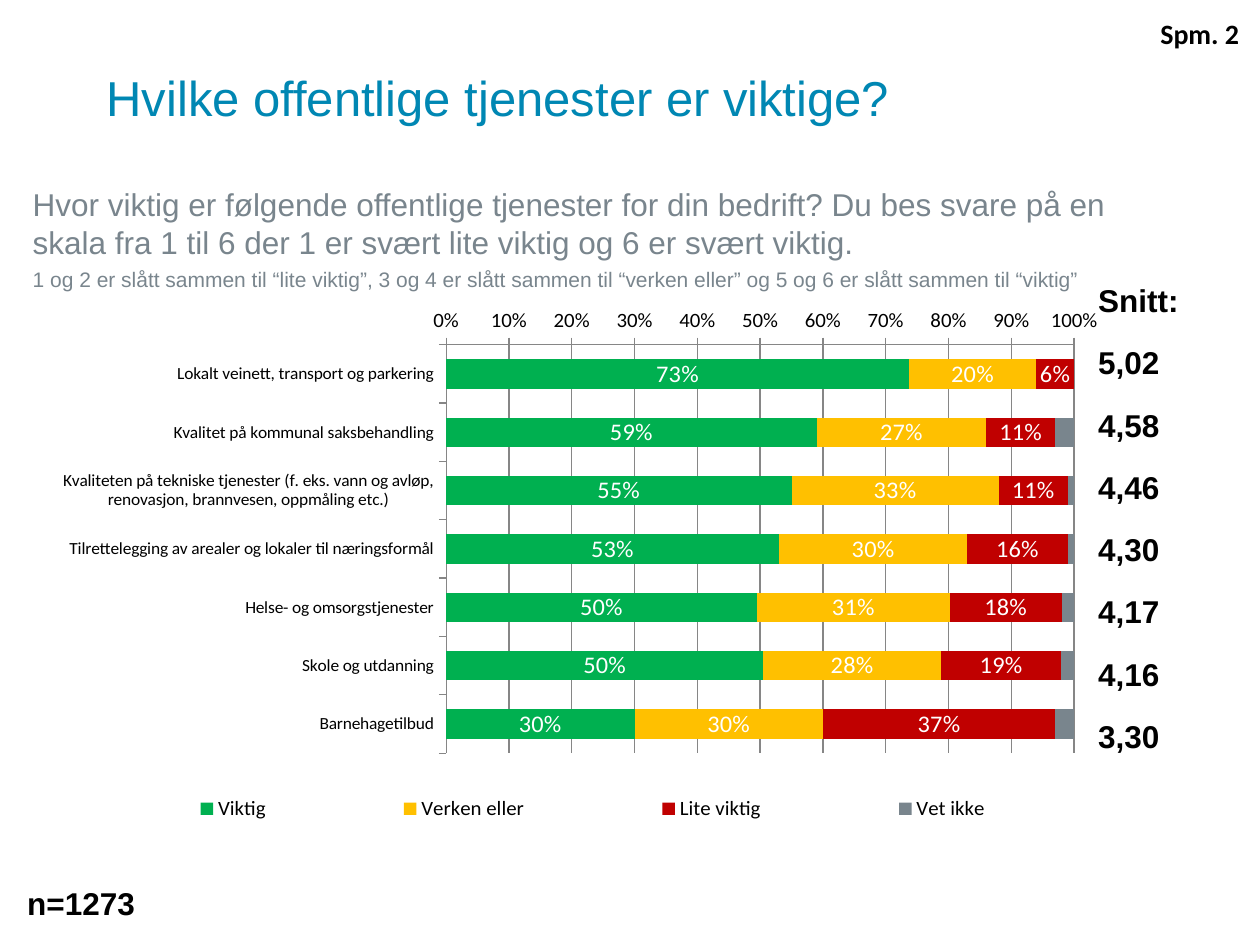
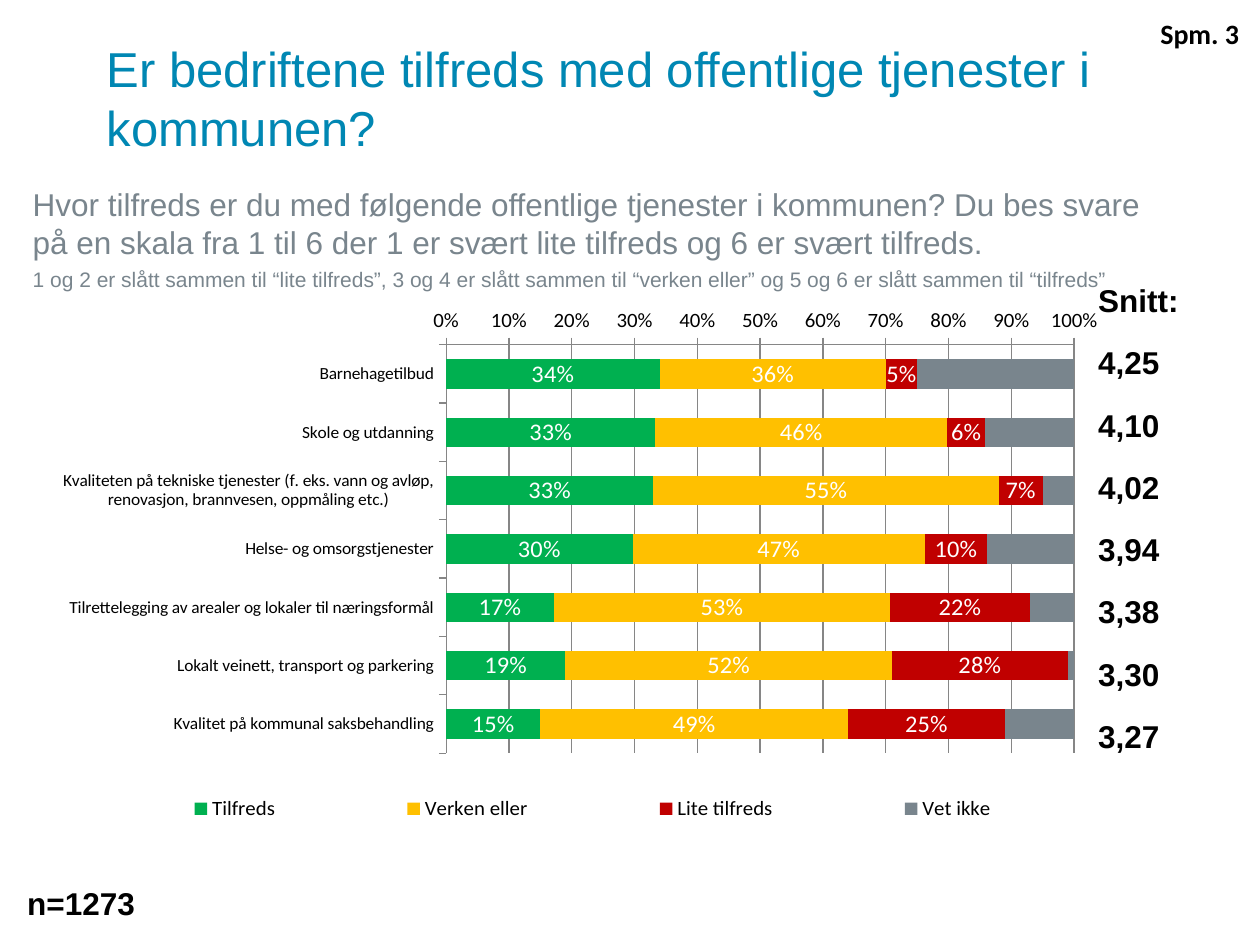
"""Build two survey slides: importance of, and satisfaction with, public services."""
from lxml import etree
from pptx import Presentation, util as u
from pptx.chart import data as chart_data
from pptx.dml.color import RGBColor
from pptx.enum import chart as ch, text
from pptx.oxml import ns

COLOURS = {"title": "0087B3", "grey": "79858D", "black": "000000", "white": "FFFFFF",
           "good": "00B050", "middle": "FFC000", "bad": "C00000", "grid": "868686"}
SERIES_COLOURS = ["good", "middle", "bad", "grey"]
PERCENT = "###0%"

ROADS = "Lokalt veinett, transport og parkering"
CASEWORK = "Kvalitet på kommunal saksbehandling"
TECHNICAL = ("Kvaliteten på tekniske tjenester (f. eks. vann og avløp, "
             "renovasjon, brannvesen, oppmåling etc.)")
PREMISES = "Tilrettelegging av arealer og lokaler til næringsformål"
HEALTH = "Helse- og omsorgstjenester"
SCHOOL = "Skole og utdanning"
NURSERY = "Barnehagetilbud"

SURVEYS = [
    {"number": 2, "title": "Hvilke offentlige tjenester er viktige?", "word": "viktig",
     "question": "Hvor viktig er følgende offentlige tjenester for din bedrift?",
     "rows": [(ROADS, 0.73, 0.2, 0.06, 0, "5,02"),
              (CASEWORK, 0.59, 0.27, 0.11, 0.03, "4,58"),
              (TECHNICAL, 0.55, 0.33, 0.11, 0.01, "4,46"),
              (PREMISES, 0.53, 0.3, 0.16, 0.01, "4,30"),
              (HEALTH, 0.5, 0.31, 0.18, 0.02, "4,17"),
              (SCHOOL, 0.5, 0.28, 0.19, 0.02, "4,16"),
              (NURSERY, 0.3, 0.3, 0.37, 0.03, "3,30")]},
    {"number": 3, "title": "Er bedriftene tilfreds med offentlige tjenester i kommunen?",
     "word": "tilfreds",
     "question": "Hvor tilfreds er du med følgende offentlige tjenester i kommunen?",
     "rows": [(NURSERY, 0.34, 0.36, 0.05, 0.25, "4,25"),
              (SCHOOL, 0.33, 0.46, 0.06, 0.14, "4,10"),
              (TECHNICAL, 0.33, 0.55, 0.07, 0.05, "4,02"),
              (HEALTH, 0.3, 0.47, 0.1, 0.14, "3,94"),
              (PREMISES, 0.17, 0.53, 0.22, 0.07, "3,38"),
              (ROADS, 0.19, 0.52, 0.28, 0.01, "3,30"),
              (CASEWORK, 0.15, 0.49, 0.25, 0.11, "3,27")]},
]


def add_text(page, place, lines, size, colour="black", bold=True, face="Arial"):
    """Add a wrapped text box with one paragraph per line and return its frame."""
    frame = page.shapes.add_textbox(*[u.Cm(length) for length in place]).text_frame
    frame.word_wrap = True
    frame.text = "\n".join(lines)
    for para in frame.paragraphs:
        for span in para.runs:
            span.font.name, span.font.size, span.font.bold = face, u.Pt(size), bold
            span.font.color.rgb = RGBColor.from_string(COLOURS[colour])
    return frame


def set_layout(parent, before, inner, **box):
    """Place a chart part by fractions of the chart area."""
    for old in parent.findall(ns.qn("c:layout")):
        parent.remove(old)
    layout = etree.Element(ns.qn("c:layout"))
    manual = etree.SubElement(layout, ns.qn("c:manualLayout"))
    settings = {"layoutTarget": "inner"} if inner else {}
    settings.update(xMode="edge", yMode="edge", **box)
    for name, value in settings.items():
        etree.SubElement(manual, ns.qn("c:" + name)).set("val", str(value))
    if before is None:
        parent.insert(0, layout)
    else:
        parent.find(ns.qn(before)).addnext(layout)


deck = Presentation()
deck.slide_width, deck.slide_height = u.Cm(25.4), u.Cm(19.05)

for survey in SURVEYS:
    page = deck.slides.add_slide(deck.slide_layouts[6])
    word = survey["word"]
    services, *answers, means = zip(*survey["rows"])

    title = add_text(page, (1.9, 0.74, 21.6, 2.44), [survey["title"]], 28, "title", False)
    title.vertical_anchor = text.MSO_ANCHOR.MIDDLE
    number = add_text(page, (19.46, 0.2, 5.77, 0.94), [f"Spm. {survey['number']}"], 16,
                      face="Calibri")
    number.paragraphs[0].alignment = text.PP_ALIGN.RIGHT
    add_text(page, (0.3, 17.7, 6.2, 1.02), ["n=1273"], 18)

    question = add_text(page, (0.41, 3.61, 23.5, 2.13), [
        f"{survey['question']} Du bes svare på en skala fra 1 til 6 "
        f"der 1 er svært lite {word} og 6 er svært {word}.",
        f"1 og 2 er slått sammen til “lite {word}”, 3 og 4 er slått sammen til "
        f"“verken eller” og 5 og 6 er slått sammen til “{word}”"], 18, "grey", False)
    note = question.paragraphs[1]
    note.space_before = u.Pt(3)
    note.runs[0].font.size = u.Pt(12)

    data = chart_data.CategoryChartData(number_format=PERCENT)
    data.categories = services
    names = [word.capitalize(), "Verken eller", f"Lite {word}", "Vet ikke"]
    for name, shares in zip(names, answers):
        data.add_series(name, shares)
    chart = page.shapes.add_chart(ch.XL_CHART_TYPE.BAR_STACKED_100, u.Cm(1.27), u.Cm(6.22),
                                  u.Cm(21.23), u.Cm(10.49), data).chart
    chart.has_title = False
    chart.font.name, chart.font.size = "Calibri", u.Pt(18)
    chart.font.color.rgb = RGBColor.from_string(COLOURS["black"])

    plot = chart.plots[0]
    plot.gap_width, plot.overlap, plot.vary_by_categories = 100, 100, False
    for series, colour in zip(plot.series, SERIES_COLOURS):
        series.format.fill.solid()
        series.format.fill.fore_color.rgb = RGBColor.from_string(COLOURS[colour])
        if colour != "grey":
            labels = series.data_labels
            labels.show_value = True
            labels.position = ch.XL_LABEL_POSITION.CENTER
            labels.number_format, labels.number_format_is_linked = PERCENT, False
            labels.font.name, labels.font.size = "Calibri", u.Pt(14)
            labels.font.color.rgb = RGBColor.from_string(COLOURS["white"])

    service_axis, share_axis = chart.category_axis, chart.value_axis
    service_axis.reverse_order = True
    service_axis.crosses = ch.XL_AXIS_CROSSES.MAXIMUM
    share_axis.minimum_scale, share_axis.maximum_scale, share_axis.major_unit = 0, 1, 0.1
    share_axis.has_major_gridlines = True
    share_axis.tick_labels.number_format = PERCENT
    share_axis.tick_labels.number_format_is_linked = False
    for axis, size in ((service_axis, 10), (share_axis, 12)):
        axis.major_tick_mark = ch.XL_TICK_MARK.OUTSIDE
        axis.tick_labels.font.size = u.Pt(size)
    for part in (service_axis, share_axis, share_axis.major_gridlines):
        part.format.line.width = u.Pt(0.75)
        part.format.line.color.rgb = RGBColor.from_string(COLOURS["grid"])

    chart.has_legend = True
    legend = chart.legend
    legend.position, legend.include_in_layout = ch.XL_LEGEND_POSITION.BOTTOM, False
    legend.font.size = u.Pt(12)
    area = chart.element.find(".//" + ns.qn("c:plotArea"))
    set_layout(area, None, True, x=0.36, y=0.04, w=0.6, h=0.81)
    set_layout(chart.element.find(".//" + ns.qn("c:legend")), "c:legendPos", False,
               x=0, y=0.92, w=1, h=0.08)

    averages = add_text(page, (21.89, 5.54, 3.1, 9.65), ["Snitt:", *means], 18)
    for para in averages.paragraphs:
        para.space_after = u.Pt(14)

deck.save("out.pptx")
